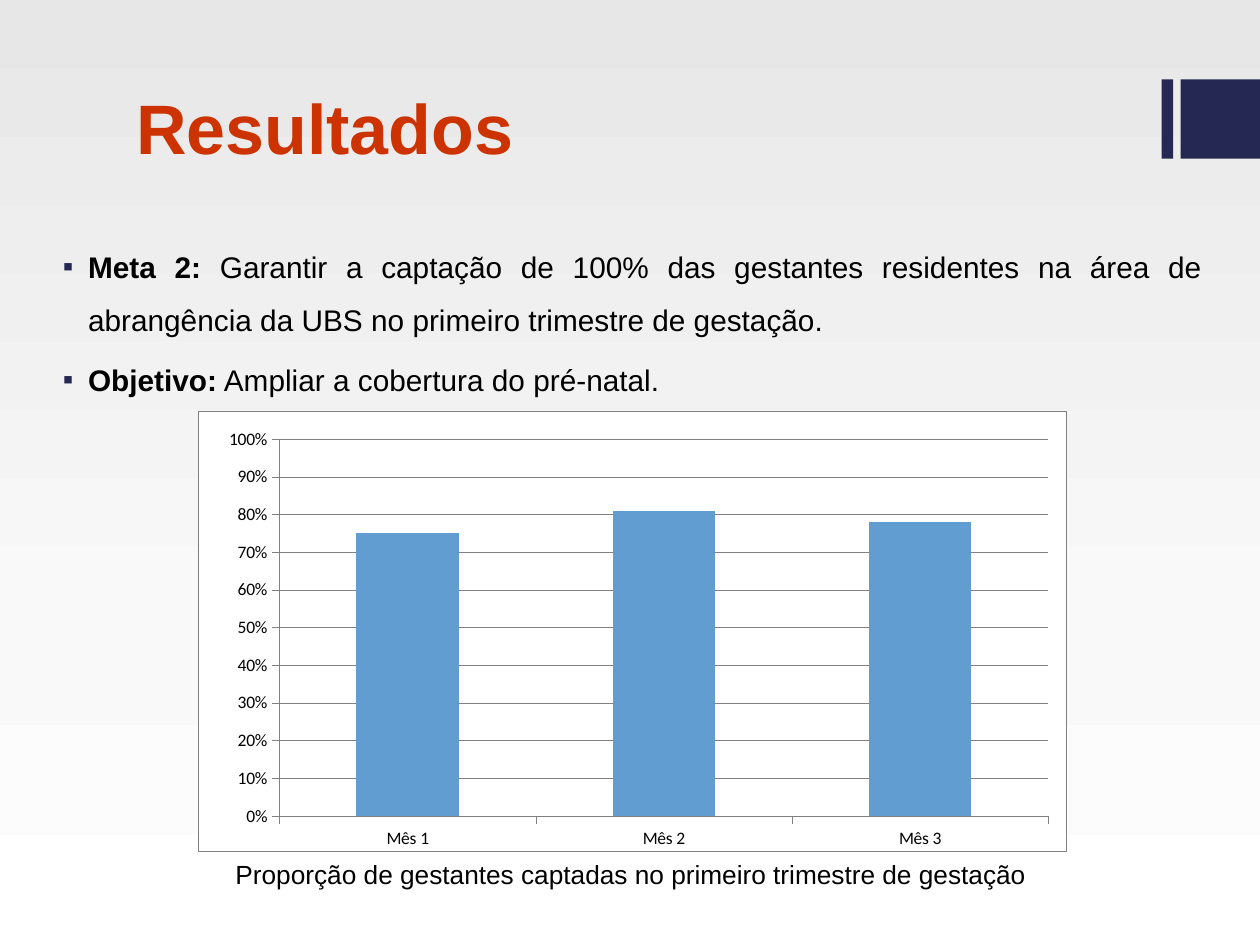
from copy import deepcopy

from lxml import etree
from pptx import Presentation
from pptx import util as u
from pptx.chart.data import CategoryChartData
from pptx.dml.color import RGBColor
from pptx.enum import chart as charts, shapes, text
from pptx.oxml import parse_xml
from pptx.oxml.ns import nsdecls, qn

COLORS = {"navy": "242852", "title": "CC3300", "text": "000000", "bar": "629DD1",
          "line": "808080", "paper": "FFFFFF"}
BACKGROUND = [(0, "E7E7E7"), (65, "F9F9F9"), (100, "FFFFFF")]
GOALS = [
    ("Meta 2:", " Garantir a captação de 100% das gestantes residentes na área de "
                "abrangência da UBS no primeiro trimestre de gestação."),
    ("Objetivo:", " Ampliar a cobertura do pré-natal."),
]
CAPTION = "Proporção de gestantes captadas no primeiro trimestre de gestação"
CAPTURE_RATES = {"Mês 1": 0.75, "Mês 2": 0.81, "Mês 3": 0.78}
PLOT_AREA = {"x": 0.094, "y": 0.064, "w": 0.886, "h": 0.856}


def rgb(name):
    return RGBColor.from_string(COLORS[name])


def inches(*lengths):
    return [u.Inches(length) for length in lengths]


def style_font(font, size, color="text", name="Arial", bold=False):
    font.size, font.name, font.bold = u.Pt(size), name, bold
    font.color.rgb = rgb(color)


def style_line(line):
    line.color.rgb = rgb("line")
    line.width = u.Pt(0.25)


def set_background(slide):
    fill = slide.background.fill
    fill.gradient()
    fill.gradient_angle = 270
    stops = fill.gradient_stops
    first = slide.background._cSld.find(".//" + qn("a:gs"))
    first.addnext(deepcopy(first))
    for stop, (percent, color) in zip(stops, BACKGROUND):
        stop.position = percent / 100
        stop.color.rgb = RGBColor.from_string(color)


def add_block(slide, left, width):
    block = slide.shapes.add_shape(shapes.MSO_SHAPE.RECTANGLE,
                                   *inches(left, 0.63, width, 0.63))
    block.shadow.inherit = False
    block.fill.solid()
    block.fill.fore_color.rgb = rgb("navy")
    block.line.fill.background()


def set_title(slide, wording):
    title = slide.shapes.title
    title.left, title.top, title.width, title.height = inches(0.98, 0.13, 8, 1.26)
    frame = title.text_frame
    frame.text = wording
    frame.auto_size = text.MSO_AUTO_SIZE.NONE
    frame.vertical_anchor = text.MSO_ANCHOR.BOTTOM
    paragraph = frame.paragraphs[0]
    paragraph.alignment = text.PP_ALIGN.LEFT
    style_font(paragraph.runs[0].font, 40, "title", bold=True)


def add_text_box(slide, *box):
    frame = slide.shapes.add_textbox(*inches(*box)).text_frame
    frame.word_wrap = True
    return frame


def set_bullet(paragraph):
    properties = paragraph._p.get_or_add_pPr()
    properties.set("marL", str(u.Inches(0.25)))
    properties.set("indent", str(u.Inches(-0.2)))
    color = etree.SubElement(properties, qn("a:buClr"))
    etree.SubElement(color, qn("a:srgbClr"), val=COLORS["navy"])
    etree.SubElement(properties, qn("a:buFont"), typeface="Arial")
    etree.SubElement(properties, qn("a:buChar"), char="▪")


def add_goals(slide):
    frame = add_text_box(slide, 0.35, 1.78, 9.29, 1.26)
    for index, (label, wording) in enumerate(GOALS):
        paragraph = frame.add_paragraph() if index else frame.paragraphs[0]
        paragraph.alignment = text.PP_ALIGN.JUSTIFY
        paragraph.line_spacing = 1.5
        paragraph.space_before = u.Pt(3.4)
        set_bullet(paragraph)
        for part, bold in ((label, True), (wording, False)):
            run = paragraph.add_run()
            run.text = part
            style_font(run.font, 17, bold=bold)


def add_caption(slide):
    frame = add_text_box(slide, 1.77, 6.76, 6.71, 0.35)
    frame.text = CAPTION
    style_font(frame.paragraphs[0].runs[0].font, 15)


def frame_chart(chart):
    """Fill and outline the chart, fill its plot and fix the plot's place."""
    space = chart._chartSpace
    fill = f'<a:solidFill><a:srgbClr val="{COLORS["paper"]}"/></a:solidFill>'
    border = (f'<a:ln w="{u.Pt(0.25)}"><a:solidFill><a:srgbClr val="{COLORS["line"]}"/>'
              "</a:solidFill></a:ln>")
    names = nsdecls("c", "a")
    space.find(qn("c:chart")).addnext(
        parse_xml(f"<c:spPr {names}>{fill}{border}</c:spPr>"))
    plot = space.find(".//" + qn("c:plotArea"))
    plot.append(parse_xml(f"<c:spPr {names}>{fill}</c:spPr>"))
    for old in plot.findall(qn("c:layout")):
        plot.remove(old)
    modes = '<c:xMode val="edge"/><c:yMode val="edge"/>'
    sizes = "".join(f'<c:{key} val="{share}"/>' for key, share in PLOT_AREA.items())
    plot.insert(0, parse_xml(
        f'<c:layout {names}><c:manualLayout><c:layoutTarget val="inner"/>'
        f"{modes}{sizes}</c:manualLayout></c:layout>"))


def add_rate_chart(slide):
    data = CategoryChartData(number_format="0%")
    data.categories = list(CAPTURE_RATES)
    data.add_series("Series 1", list(CAPTURE_RATES.values()))
    chart = slide.shapes.add_chart(charts.XL_CHART_TYPE.COLUMN_CLUSTERED,
                                   *inches(1.57, 3.26, 6.89, 3.5), data).chart
    chart.has_legend = chart.has_title = False
    style_font(chart.font, 10, name="Calibri")
    plot = chart.plots[0]
    plot.gap_width, plot.vary_by_categories = 150, False
    bars = plot.series[0].format.fill
    bars.solid()
    bars.fore_color.rgb = rgb("bar")
    for axis in (chart.category_axis, chart.value_axis):
        axis.major_tick_mark = charts.XL_TICK_MARK.OUTSIDE
        style_font(axis.tick_labels.font, 10, name="Calibri")
        style_line(axis.format.line)
    values = chart.value_axis
    values.minimum_scale, values.maximum_scale, values.major_unit = 0, 1, 0.1
    values.tick_labels.number_format = "0%"
    values.tick_labels.number_format_is_linked = False
    style_line(values.major_gridlines.format.line)
    frame_chart(chart)


def main():
    presentation = Presentation()
    presentation.slide_width, presentation.slide_height = inches(10, 7.5)
    slide = presentation.slides.add_slide(presentation.slide_layouts[5])
    set_background(slide)
    add_block(slide, 9.22, 0.09)
    add_block(slide, 9.37, 0.63)
    set_title(slide, "Resultados")
    add_goals(slide)
    add_rate_chart(slide)
    add_caption(slide)
    presentation.save("out.pptx")


if __name__ == "__main__":
    main()
